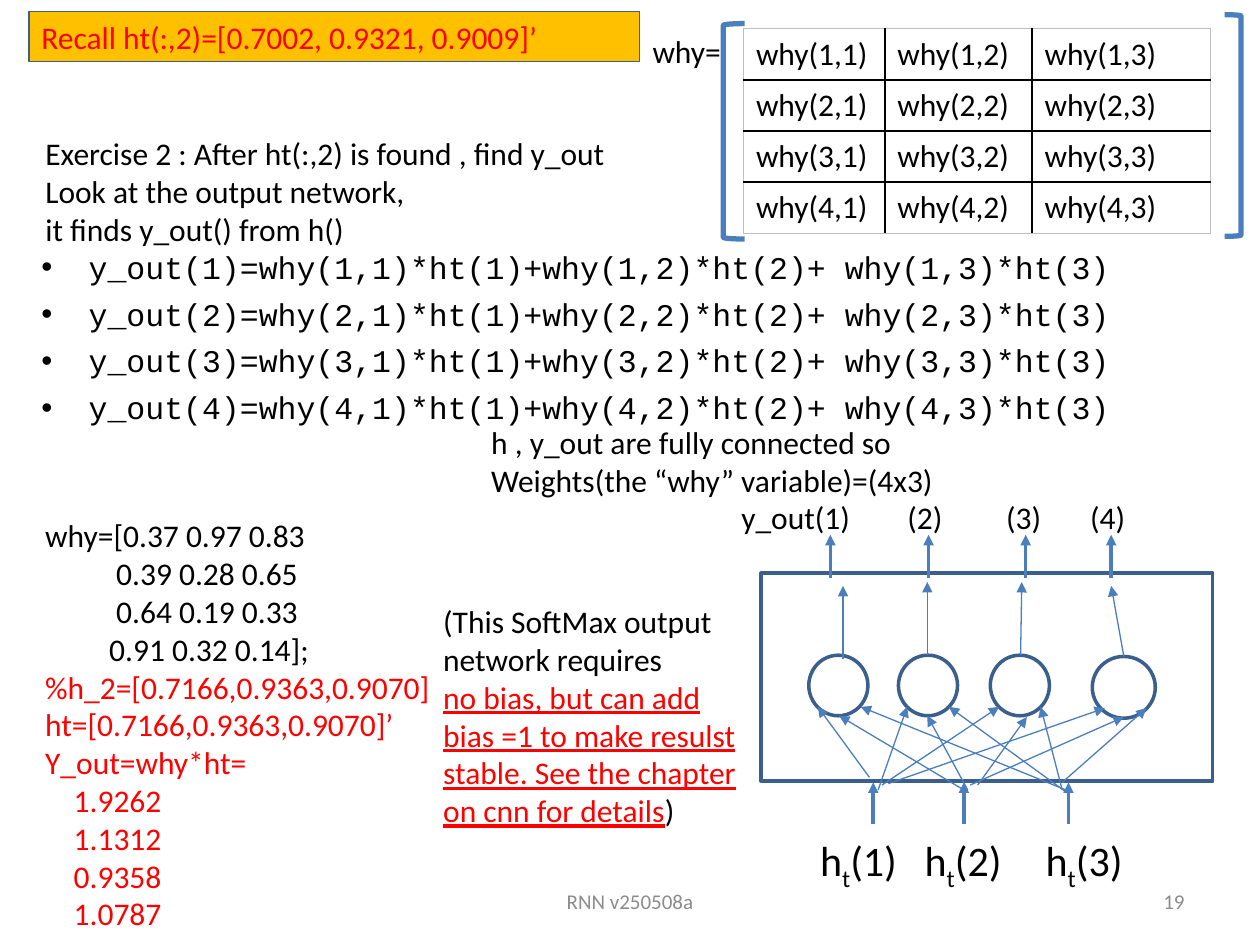
from dataclasses import dataclass

from lxml.etree import SubElement
from pptx import Presentation
from pptx.dml.color import RGBColor
from pptx.enum.shapes import MSO_CONNECTOR, MSO_SHAPE
from pptx.enum.text import MSO_ANCHOR, PP_ALIGN
from pptx.oxml.ns import qn
from pptx.util import Pt


@dataclass(frozen=True)
class Theme:
    text: str = "000000"
    accent: str = "FF0000"
    muted: str = "8C8C8C"
    banner: str = "FFC000"
    outline: str = "3A5F8C"
    arrow: str = "4B7EBC"
    grid: str = "000000"
    frame: str = "BFBFBF"
    font: str = "Calibri"
    code_font: str = "Courier New"
    body: float = 18
    input_label: float = 24
    footer: float = 12


THEME = Theme()


# Shared helpers: boxes are (left, top, width, height) in points
def points(*values):
    return [Pt(value) for value in values]


def add_run(paragraph, text, color=THEME.text, size=THEME.body,
            font=THEME.font, underline=None, baseline=None):
    run = paragraph.add_run()
    run.text = text
    run.font.name, run.font.size = font, Pt(size)
    run.font.color.rgb = RGBColor.from_string(color)
    run.font.underline = underline
    if baseline is not None:
        run.font._element.set("baseline", str(baseline))


def set_indent(paragraph, left, first=0):
    properties = paragraph._p.get_or_add_pPr()
    properties.set("marL", str(Pt(left)))
    properties.set("indent", str(Pt(first)))
    return properties


def add_text(slide, box, lines, align=PP_ALIGN.LEFT, anchor=MSO_ANCHOR.TOP):
    """Each line is a list of (text, run options)."""
    frame = slide.shapes.add_textbox(*points(*box)).text_frame
    frame.word_wrap, frame.vertical_anchor = True, anchor
    for index, runs in enumerate(lines):
        paragraph = frame.add_paragraph() if index else frame.paragraphs[0]
        paragraph.alignment = align
        for text, options in runs:
            add_run(paragraph, text, **options)
    return frame


def add_outline(slide, kind, box, color, width, fill=None):
    outline = slide.shapes.add_shape(kind, *points(*box))
    outline.shadow.inherit = False
    outline.line.color.rgb = RGBColor.from_string(color)
    outline.line.width = Pt(width)
    if fill:
        outline.fill.solid()
        outline.fill.fore_color.rgb = RGBColor.from_string(fill)
    else:
        outline.fill.background()
    return outline


def add_arrow(slide, origin, start, end, width):
    x, y = origin
    arrow = slide.shapes.add_connector(MSO_CONNECTOR.STRAIGHT, *points(
        x + start[0], y + start[1], x + end[0], y + end[1]))
    arrow.line.color.rgb = RGBColor.from_string(THEME.arrow)
    arrow.line.width = Pt(width)
    SubElement(arrow.line._get_or_add_ln(), qn("a:tailEnd"), type="triangle")
    SubElement(arrow._element.spPr, qn("a:effectLst"))


# Regions
def place_title(slide, box):
    title = slide.shapes.title
    title.left, title.top, title.width, title.height = points(*box)
    frame = title.text_frame
    frame.word_wrap, frame.vertical_anchor = True, MSO_ANCHOR.MIDDLE
    paragraph = frame.paragraphs[0]
    paragraph.alignment = PP_ALIGN.LEFT
    lines = ("Exercise 2 : After ht(:,2) is found , find y_out",
             "Look at the output network,", "it finds y_out() from h()")
    for index, line in enumerate(lines):
        if index:
            paragraph.add_line_break()
        add_run(paragraph, line)


def place_banner(slide, box):
    banner = add_outline(slide, MSO_SHAPE.RECTANGLE, box, THEME.outline, 0.75, THEME.banner)
    banner.text_frame.vertical_anchor = MSO_ANCHOR.TOP
    paragraph = banner.text_frame.paragraphs[0]
    paragraph.alignment = PP_ALIGN.LEFT
    add_run(paragraph, "Recall ht(:,2)=[0.7002, 0.9321, 0.9009]’", THEME.accent)


def place_equations(slide, box):
    lines = []
    for row in range(1, 5):
        terms = [f"why({row},{column})*ht({column})" for column in (1, 2, 3)]
        equation = f"y_out({row})={terms[0]}+{terms[1]}+ {terms[2]}"
        lines.append([(equation, dict(font=THEME.code_font))])
    for paragraph in add_text(slide, box, lines).paragraphs:
        paragraph.space_after = Pt(5.1)
        properties = set_indent(paragraph, 27, -27)
        SubElement(properties, qn("a:buFont"), typeface="Arial")
        SubElement(properties, qn("a:buChar"), char="•")


def set_border(cell, side, color, width):
    border = SubElement(cell._tc.get_or_add_tcPr(), qn(f"a:{side}"), w=str(Pt(width)))
    fill = SubElement(border, qn("a:solidFill"))
    SubElement(fill, qn("a:srgbClr"), val=color)


def place_weight_matrix(slide, box):
    left, top, width, height = box
    add_text(slide, (left - 59, top - 1.4, 58, 29), [[("why=", {})]])
    rows, columns = 4, 3
    table = slide.shapes.add_table(rows, columns, *points(*box)).table
    table.first_row = table.horz_banding = False
    for column, column_width in zip(table.columns, (80.8, 84.2, 102)):
        column.width = Pt(column_width)
    for r in range(rows):
        table.rows[r].height = Pt(height / rows)
        for c in range(columns):
            cell = table.cell(r, c)
            add_run(cell.text_frame.paragraphs[0], f"why({r + 1},{c + 1})")
            edges = {"lnL": c == 0, "lnR": c == columns - 1,
                     "lnT": r == 0, "lnB": r == rows - 1}
            for side, outer in edges.items():
                set_border(cell, side, THEME.frame if outer else THEME.grid,
                           0.75 if outer else 1)
            cell.fill.background()
    # Brackets around the matrix
    for kind, bracket in ((MSO_SHAPE.LEFT_BRACKET, (left - 11.5, top - 2.9, 12.2, 123.1)),
                          (MSO_SHAPE.RIGHT_BRACKET, (left + width + 8, top - 8, 9.4, 126.7))):
        add_outline(slide, kind, bracket, THEME.arrow, 3)


def place_network(slide, box):
    left, top, _, _ = origin_box = box
    origin = origin_box[:2]
    add_outline(slide, MSO_SHAPE.RECTANGLE, box, THEME.outline, 2)

    # Output labels share one line, spaced by tab stops
    labels = add_text(slide, (left - 18.5, top - 46.7, 239, 29),
                      [[("y_out(1)\t(2)\t(3)\t(4)", {})]])
    stops = SubElement(labels.paragraphs[0]._p.get_or_add_pPr(), qn("a:tabLst"))
    for stop in (94.9, 151.4, 199.4):
        SubElement(stops, qn("a:tab"), pos=str(Pt(stop)), algn="l")

    # Neurons
    for neuron in ((27.2, 46.9, 33.8, 34.6), (78.4, 46.9, 33.8, 34.6),
                   (130.9, 46.9, 33.8, 34.6), (189.2, 47.6, 36, 35.3)):
        x, y, width, height = neuron
        add_outline(slide, MSO_SHAPE.OVAL, (left + x, top + y, width, height), THEME.outline, 2)

    # Arrows leaving and entering the network
    for x in (39.5, 95.6, 151.1, 200):
        add_arrow(slide, origin, (x, 2.6), (x, -21.9), 2)
    for number, (x, label_x) in enumerate(((64, 26.5), (115.8, 86.3), (175.6, 155.4)), 1):
        add_arrow(slide, origin, (x, 143.4), (x, 119.6), 2)
        size = dict(size=THEME.input_label)
        add_text(slide, (left + label_x, top + 146, 70, 36),
                 [[("h", size), ("t", dict(size, baseline=-25000)), (f"({number})", size)]])

    # Full connections, one row per neuron, then each neuron's output
    connections = (
        ((61.8, 116.7), (32.3, 76.4)), ((115.8, 123.9), (44.5, 81.5)), ((174.1, 123.9), (56.8, 76.4)),
        ((66.8, 123.9), (83.4, 76.4)), ((118, 123.9), (94.9, 81.5)), ((175.6, 126.1), (107.2, 76.4)),
        ((69, 121.1), (136, 76.4)), ((123.7, 121.1), (151.8, 82.2)), ((172, 123.9), (159.7, 76.4)),
        ((72.6, 120.3), (196.4, 77.1)), ((119.4, 121.1), (207.2, 82.2)), ((172, 119.6), (220.2, 77.1)),
        ((46.7, 49.1), (46.7, 7.3)), ((94.9, 46.9), (94.9, 5.1)),
        ((148.2, 46.9), (148.9, 5.1)), ((207.2, 47.6), (200, 7.3)))
    for start, end in connections:
        add_arrow(slide, origin, start, end, 0.75)


def place_worked_example(slide, box):
    red = dict(color=THEME.accent)
    lines = (("why=[0.37 0.97 0.83", 0, {}), ("0.39 0.28 0.65", 40.6, {}),
             ("0.64 0.19 0.33", 40.6, {}), ("0.91 0.32 0.14];", 36.6, {}),
             ("%h_2=[0.7166,0.9363,0.9070]", 0, red), ("ht=[0.7166,0.9363,0.9070]’", 0, red),
             ("Y_out=why*ht=", 0, red), ("1.9262", 16.3, red), ("1.1312", 16.3, red),
             ("0.9358", 16.3, red), ("1.0787", 16.3, red))
    frame = add_text(slide, box, [[(text, options)] for text, _, options in lines])
    for paragraph, (_, indent, _) in zip(frame.paragraphs, lines):
        set_indent(paragraph, indent)


def place_notes(slide, connection_box, softmax_box):
    add_text(slide, connection_box, [[("h , y_out are fully connected so", {})],
                                     [("Weights(the “why” variable)=(4x3)", {})]])
    add_text(slide, softmax_box, [
        [("(This SoftMax output network requires", {})],
        [("no bias, but can add bias =1 to make resulst stable. See the chapter on cnn for details",
          dict(color=THEME.accent, underline=True)), (")", {})]])


def place_footer(slide, footer_box, number_box):
    style = dict(color=THEME.muted, size=THEME.footer)
    for box, text, align in ((footer_box, "RNN v250508a", PP_ALIGN.CENTER),
                             (number_box, "19", PP_ALIGN.RIGHT)):
        add_text(slide, box, [[(text, style)]], align, MSO_ANCHOR.MIDDLE)


def main():
    deck = Presentation()
    deck.slide_width, deck.slide_height = points(720, 540)
    slide = deck.slides.add_slide(deck.slide_layouts[5])
    place_title(slide, (18.7, 69, 340, 80))
    place_equations(slide, (16.6, 138.2, 651, 112))
    place_footer(slide, (246, 500.5, 228, 28.8), (516, 500.5, 168, 28.8))
    place_notes(slide, (273.6, 238.3, 270, 51), (246.2, 340.6, 191.5, 138))
    place_weight_matrix(slide, (424.8, 16.4, 267, 116.8))
    place_network(slide, (435, 327.5, 258, 119))
    place_banner(slide, (16.6, 6.5, 349, 28.8))
    place_worked_example(slide, (18.7, 291.6, 237, 247))
    deck.save("out.pptx")


if __name__ == "__main__":
    main()
